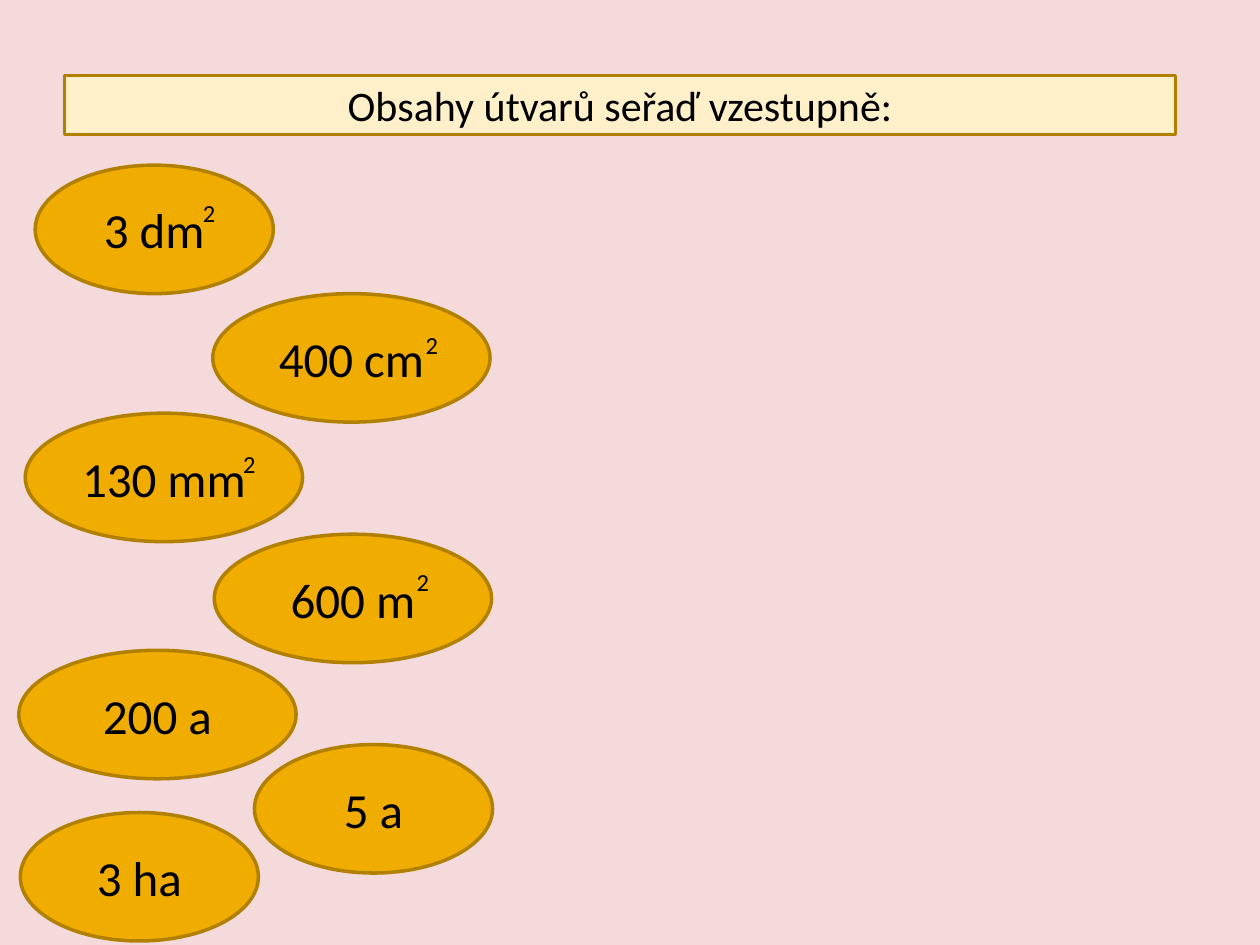
from pptx import Presentation
from pptx.dml.color import RGBColor
from pptx.enum.shapes import MSO_SHAPE as Preset
from pptx.enum.text import MSO_ANCHOR as Anchor, MSO_AUTO_SIZE as AutoSize, PP_ALIGN as Align
from pptx.util import Cm, Pt

COLORS = {
    "background": "F4DADA",
    "heading": "FFF0C9",
    "oval": "F0AD00",
    "outline": "B28000",
    "text": "000000",
}
NARROW, WIDE, OVAL_HEIGHT = 4.8, 5.59, 2.59

# label, left, top, width, position of the exponent (all in cm)
AREAS = [
    ("3 dm", 0.71, 3.33, NARROW, (3.84, 3.86)),
    ("400 cm", 4.29, 5.92, WIDE, (8.33, 6.53)),
    ("130 mm", 0.51, 8.33, WIDE, (4.65, 8.92)),
    ("600 m", 4.32, 10.77, WIDE, (8.15, 11.3)),
    ("200 a", 0.38, 13.11, WIDE, None),
    ("5 a", 5.13, 15.01, NARROW, None),
    ("3 ha", 0.41, 16.38, NARROW, None),
]


def rgb(name):
    return RGBColor.from_string(COLORS[name])


def write(shape, text, size, align=Align.CENTER, anchor=Anchor.MIDDLE,
          fill=None, auto_size=AutoSize.NONE):
    """Put formatted text in a shape; a fill also brings the outline."""
    if fill:
        shape.fill.solid()
        shape.fill.fore_color.rgb = rgb(fill)
        shape.line.color.rgb = rgb("outline")
        shape.line.width = Pt(2)
    shape.shadow.inherit = False
    frame = shape.text_frame
    frame.word_wrap = True
    frame.auto_size = auto_size
    frame.vertical_anchor = anchor
    paragraph = frame.paragraphs[0]
    paragraph.alignment = align
    run = paragraph.add_run()
    run.text = text
    run.font.name = "Calibri"
    run.font.size = Pt(size)
    run.font.color.rgb = rgb("text")


prs = Presentation()
prs.slide_width, prs.slide_height = Cm(25.4), Cm(19.05)
slide = prs.slides.add_slide(prs.slide_layouts[5])
slide.background.fill.solid()
slide.background.fill.fore_color.rgb = rgb("background")

heading = slide.shapes.title
heading.left, heading.top = Cm(1.3), Cm(1.52)
heading.width, heading.height = Cm(22.4), Cm(1.19)
write(heading, "Obsahy útvarů seřaď vzestupně:", size=24, fill="heading")

for label, left, top, width, _ in AREAS:
    oval = slide.shapes.add_shape(Preset.OVAL, Cm(left), Cm(top), Cm(width), Cm(OVAL_HEIGHT))
    write(oval, label, size=28, fill="oval")

for *_, position in AREAS:
    if position:
        left, top = position
        exponent = slide.shapes.add_textbox(Cm(left), Cm(top), Cm(1.4), Cm(0.86))
        write(exponent, "2", size=14, align=Align.LEFT, anchor=Anchor.TOP,
              auto_size=AutoSize.SHAPE_TO_FIT_TEXT)

prs.save("out.pptx")
